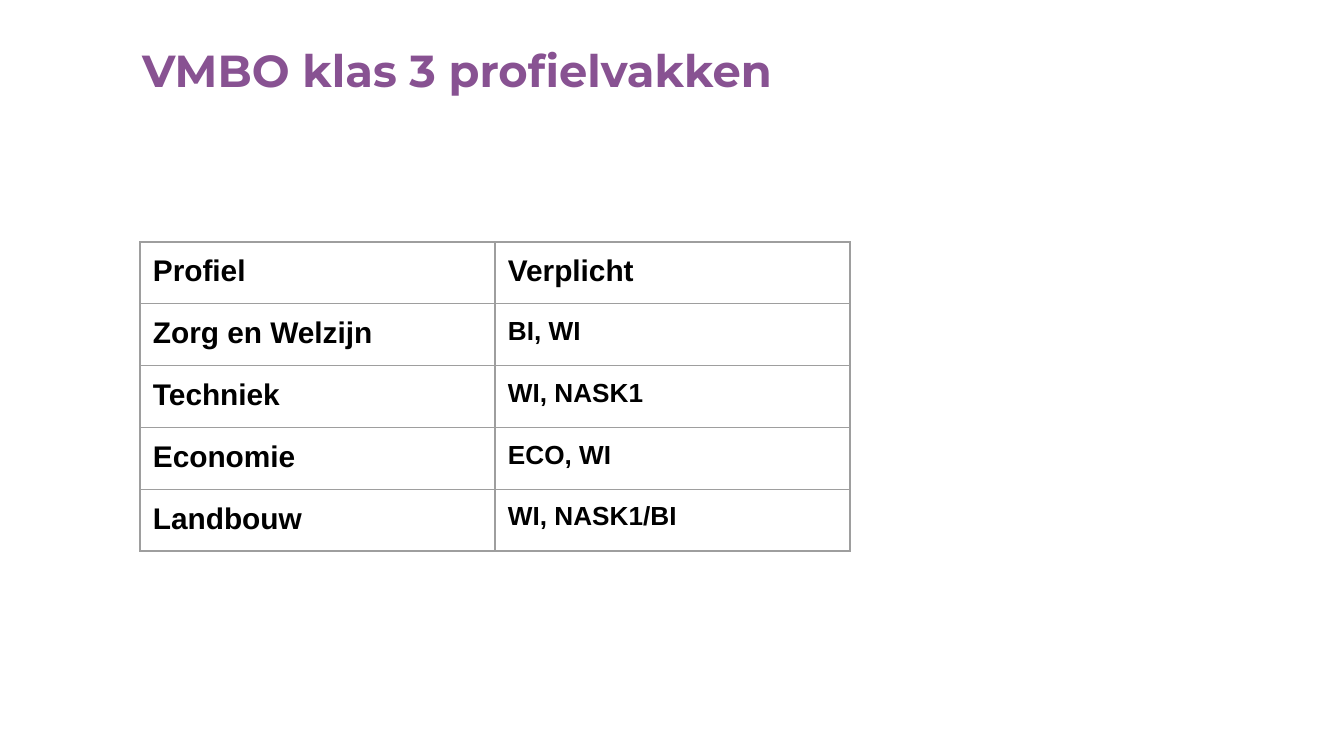
from dataclasses import dataclass

from lxml.etree import SubElement
from pptx import Presentation
from pptx.dml.color import RGBColor as RGB
from pptx.enum.text import MSO_ANCHOR as Anchor
from pptx.oxml.ns import qn
from pptx.util import Pt

SLIDE_W, SLIDE_H = 1344, 756
EMU_PER_PX = 9144000 / SLIDE_W
INSET = 13


@dataclass(frozen=True)
class Theme:
    title_font: str = "Montserrat"
    body_font: str = "Arial"
    title_color: str = "885292"
    text_color: str = "000000"
    border_color: str = "9E9E9E"
    border_pt: float = 0.75
    title_size: int = 24
    label_size: int = 16
    subject_size: int = 14


THEME = Theme()

PROFILES = [
    ("Profiel", "Verplicht"),
    ("Zorg en Welzijn", "BI, WI"),
    ("Techniek", "WI, NASK1"),
    ("Economie", "ECO, WI"),
    ("Landbouw", "WI, NASK1/BI"),
]


def px(n):
    return round(n * EMU_PER_PX)


def set_insets(target):
    for side in ("left", "right", "top", "bottom"):
        setattr(target, f"margin_{side}", px(INSET))


def write_bold(tf, text, font, size, color):
    tf.text = text
    f = tf.paragraphs[0].runs[0].font
    f.name, f.size, f.bold = font, Pt(size), True
    f.color.rgb = RGB.from_string(color)


def add_title(slide, text, x, y, w, h):
    tf = slide.shapes.add_textbox(px(x), px(y), px(w), px(h)).text_frame
    tf.word_wrap = True
    tf.vertical_anchor = Anchor.MIDDLE
    set_insets(tf)
    write_bold(tf, text, THEME.title_font, THEME.title_size, THEME.title_color)


def set_borders(cell):
    tc_pr = cell._tc.get_or_add_tcPr()
    for tag in ("a:lnL", "a:lnR", "a:lnT", "a:lnB"):
        ln = SubElement(tc_pr, qn(tag), w=str(Pt(THEME.border_pt)))
        fill = SubElement(ln, qn("a:solidFill"))
        SubElement(fill, qn("a:srgbClr"), val=THEME.border_color)


def add_profile_table(slide, rows, x, y, col_w, row_h):
    n_cols = len(rows[0])
    table = slide.shapes.add_table(len(rows), n_cols, px(x), px(y),
                                   px(col_w * n_cols), px(row_h * len(rows))).table
    table.first_row = table.horz_banding = False
    for i, row in enumerate(rows):
        for j, text in enumerate(row):
            cell = table.cell(i, j)
            set_insets(cell)
            # Borders come before the fill in the cell properties
            set_borders(cell)
            cell.fill.background()
            # Headings and profile names are larger than the subjects
            size = THEME.label_size if i == 0 or j == 0 else THEME.subject_size
            write_bold(cell.text_frame, text, THEME.body_font, size, THEME.text_color)


def main():
    prs = Presentation()
    prs.slide_width, prs.slide_height = px(SLIDE_W), px(SLIDE_H)
    slide = prs.slides.add_slide(prs.slide_layouts[6])

    # Heading
    add_title(slide, "VMBO klas 3 profielvakken", 129, 8, 1105, 124)

    # Profiles with their required subjects
    add_profile_table(slide, PROFILES, 140, 242, 355, 56)

    prs.save("out.pptx")


if __name__ == "__main__":
    main()
